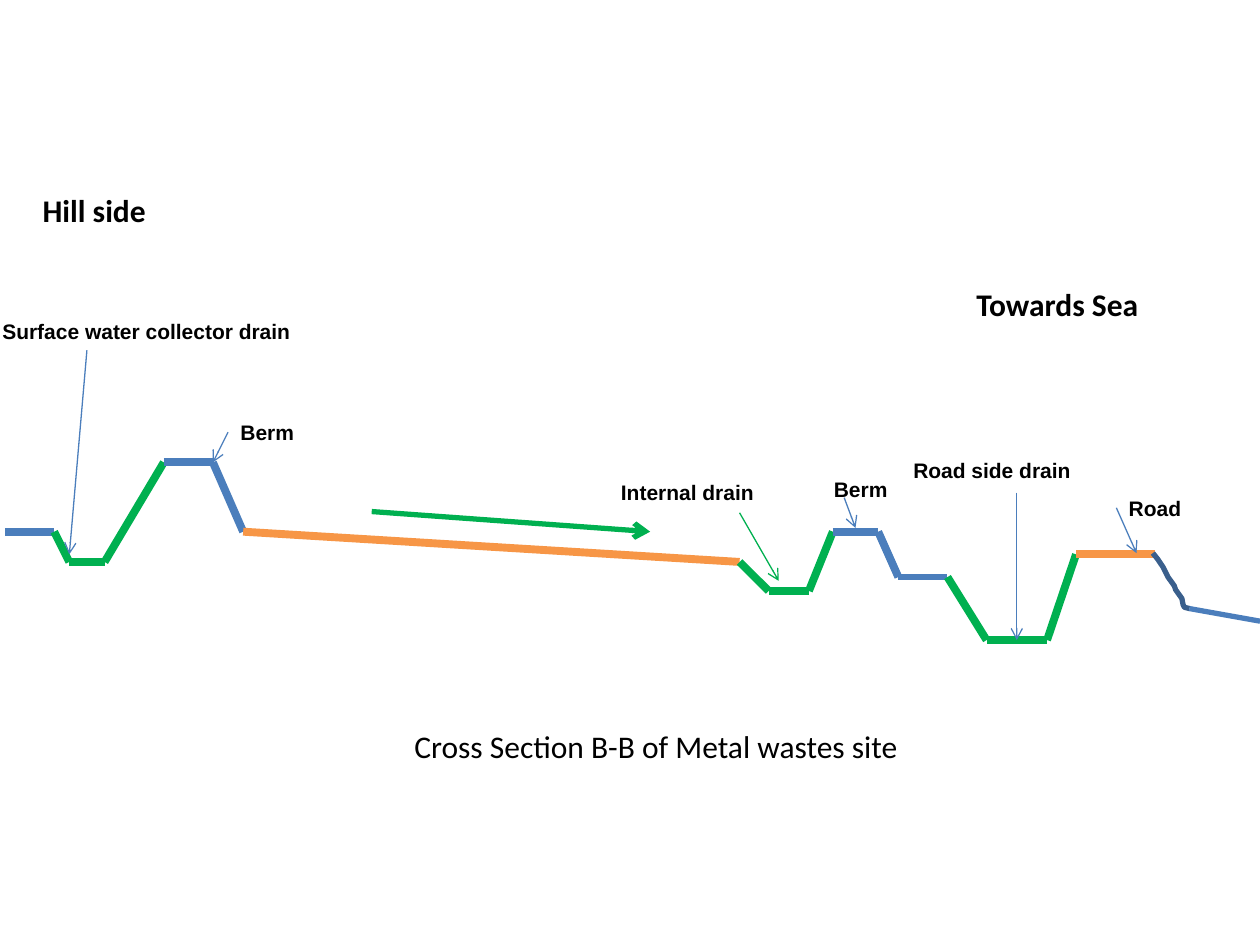
from itertools import pairwise

from pptx import Presentation
from pptx.dml.color import RGBColor
from pptx.enum.shapes import MSO_CONNECTOR as Connector
from pptx.enum.text import MSO_AUTO_SIZE as AutoSize
from pptx.oxml.ns import qn
from pptx.util import Inches, Pt
from lxml import etree

GREEN = RGBColor(0x00, 0xB0, 0x50)
BLUE = RGBColor(0x4B, 0x7E, 0xBC)
DARK_BLUE = RGBColor(0x3A, 0x5F, 0x8C)
ORANGE = RGBColor(0xF7, 0x96, 0x46)
BLACK = RGBColor(0x00, 0x00, 0x00)

deck = Presentation()
deck.slide_width, deck.slide_height = Inches(10), Inches(7.5)
page = deck.slides.add_slide(deck.slide_layouts[6])


def add_line(start, end, color, width, arrow=False):
    line = page.shapes.add_connector(
        Connector.STRAIGHT, *(Inches(value) for value in (*start, *end)))
    line.line.color.rgb = color
    line.line.width = Pt(width)
    if arrow:
        etree.SubElement(line.line._get_or_add_ln(), qn("a:tailEnd"), type="arrow")
    etree.SubElement(line._element.spPr, qn("a:effectLst"))


def add_label(text, left, top, width, height, font, size, bold):
    box = page.shapes.add_textbox(
        Inches(left), Inches(top), Inches(width), Inches(height))
    box.text_frame.word_wrap = False
    box.text_frame.auto_size = AutoSize.SHAPE_TO_FIT_TEXT
    span = box.text_frame.paragraphs[0].add_run()
    span.text = text
    span.font.name, span.font.size, span.font.bold = font, Pt(size), bold
    span.font.color.rgb = BLACK


# Ground profile from the hill to the road: each point ends a stretch
profile = [
    ((0.04, 4.22), None, None),
    ((0.43, 4.22), BLUE, 4.5),
    # Surface water collector drain
    ((0.55, 4.46), GREEN, 4.5),
    ((0.83, 4.46), GREEN, 4.5),
    ((1.30, 3.67), GREEN, 4.5),
    # Hill side berm
    ((1.69, 3.67), BLUE, 4.5),
    ((1.93, 4.22), BLUE, 4.5),
    # Waste site floor
    ((5.87, 4.46), ORANGE, 4.5),
    # Internal drain
    ((6.10, 4.69), GREEN, 4.5),
    ((6.42, 4.69), GREEN, 4.5),
    ((6.61, 4.22), GREEN, 4.5),
    # Sea side berm
    ((6.97, 4.22), BLUE, 4.5),
    ((7.13, 4.58), BLUE, 4.5),
    ((7.52, 4.58), BLUE, 3),
    # Road side drain
    ((7.83, 5.08), GREEN, 4.5),
    ((8.31, 5.08), GREEN, 4.5),
    ((8.54, 4.40), GREEN, 4.5),
    # Road
    ((9.17, 4.40), ORANGE, 4.5),
]
for (start, _, _), (end, color, width) in pairwise(profile):
    add_line(start, end, color, width)

# Rough slope below the road, then the shore
slope = [(9.15, 4.39), (9.19, 4.44), (9.23, 4.50), (9.25, 4.54), (9.27, 4.58),
         (9.32, 4.65), (9.33, 4.68), (9.38, 4.75), (9.39, 4.80), (9.40, 4.82),
         (9.44, 4.83)]
points = [(Inches(x), Inches(y)) for x, y in slope]
builder = page.shapes.build_freeform(*points[0])
builder.add_line_segments(points[1:], close=False)
bank = builder.convert_to_shape()
bank.shadow.inherit = False
bank.fill.background()
bank.line.color.rgb = DARK_BLUE
bank.line.width = Pt(3)
add_line(slope[-1], (10, 4.93), BLUE, 3)

# Flow direction
add_line((2.95, 4.06), (5.16, 4.22), GREEN, 3, arrow=True)

# Pointers from the labels
for start, end, color in [
    ((0.69, 2.78), (0.55, 4.40), BLUE),
    ((1.81, 3.43), (1.69, 3.67), BLUE),
    ((5.87, 4.07), (6.18, 4.61), GREEN),
    ((6.70, 3.95), (6.79, 4.19), BLUE),
    ((8.07, 3.91), (8.07, 5.08), BLUE),
    ((8.86, 4.03), (9.02, 4.39), BLUE),
]:
    add_line(start, end, color, 0.75, arrow=True)

# Part labels
for text, left, top, width in [
    ("Surface water collector drain", -0.08, 2.48, 2.51),
    ("Berm", 1.81, 3.28, 0.63),
    ("Internal drain", 4.83, 3.76, 1.27),
    ("Berm", 6.52, 3.73, 0.63),
    ("Road side drain", 7.15, 3.58, 1.47),
    ("Road", 8.86, 3.88, 0.62),
]:
    add_label(text, left, top, width, 0.3, "Arial", 12, True)

# Directions and caption
for text, left, top, width, bold in [
    ("Hill side", 0.24, 1.47, 1.03, True),
    ("Towards Sea", 7.65, 2.21, 1.5, True),
    ("Cross Section B-B of Metal wastes site", 3.19, 5.72, 4.08, False),
]:
    add_label(text, left, top, width, 0.4, "Calibri", 18, bold)

deck.save("out.pptx")
